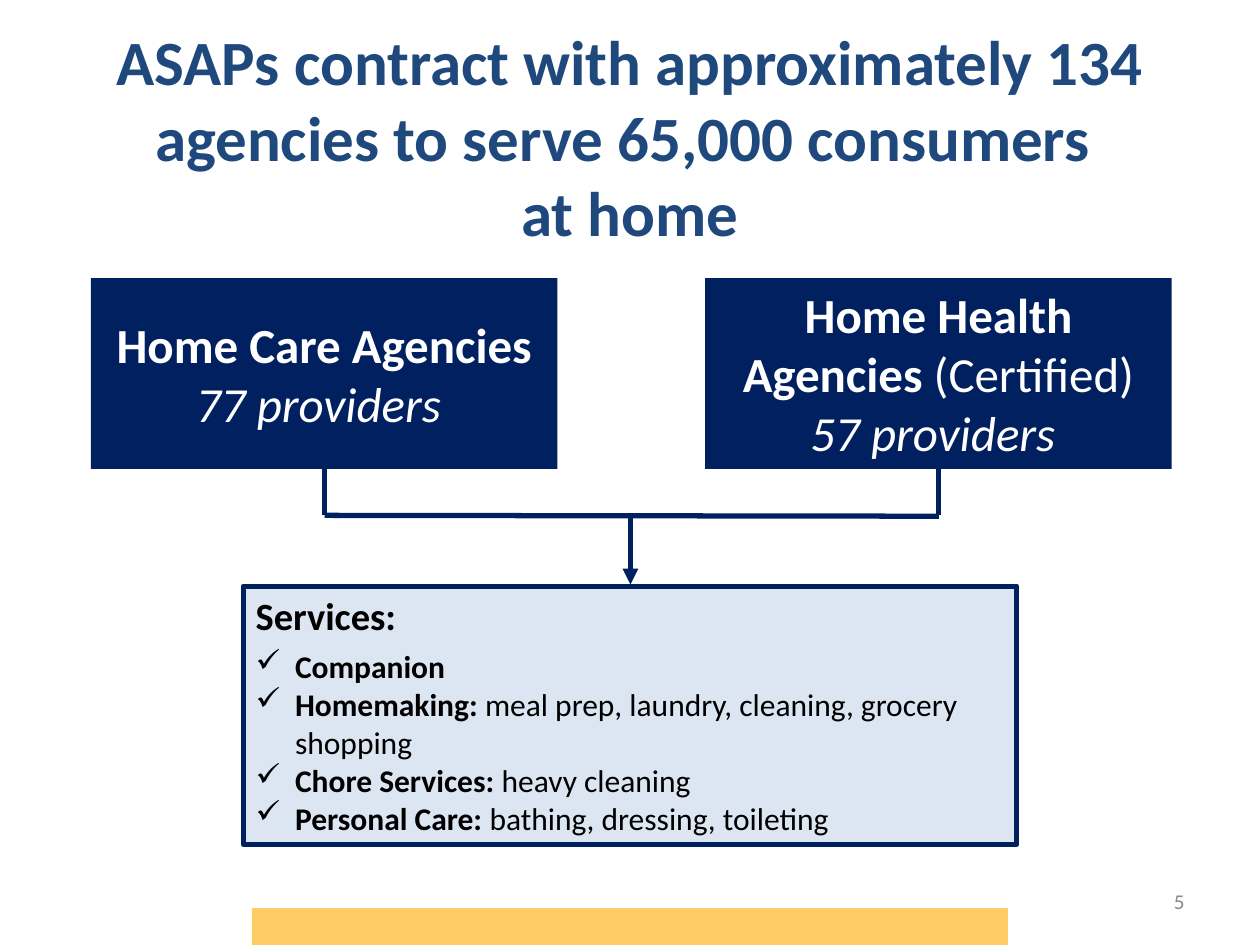
from pptx import Presentation
from pptx.dml.color import RGBColor
from pptx.enum.shapes import MSO_CONNECTOR, MSO_SHAPE
from pptx.enum.text import MSO_ANCHOR, PP_ALIGN
from pptx.oxml.ns import qn
from pptx.util import Pt
from lxml.etree import SubElement

NAVY = RGBColor(0x00, 0x20, 0x60)
TITLE_BLUE = RGBColor(0x1F, 0x49, 0x7D)
PALE_BLUE = RGBColor(0xDC, 0xE6, 0xF2)
GOLD = RGBColor(0xFF, 0xCC, 0x66)
GREY = RGBColor(0x88, 0x88, 0x88)
BLACK = RGBColor(0, 0, 0)
WHITE = RGBColor(0xFF, 0xFF, 0xFF)

SERVICES = [
    ("Companion", ""),
    ("Homemaking: ", "meal prep, laundry, cleaning, grocery shopping"),
    ("Chore Services: ", "heavy cleaning"),
    ("Personal Care: ", "bathing, dressing, toileting"),
]


def add_span(para, text, size, color, bold=False, italic=False):
    span = para.add_run()
    span.text = text
    span.font.name = "Calibri"
    span.font.size = Pt(size)
    span.font.color.rgb = color
    span.font.bold = bold
    span.font.italic = italic


def add_text_box(page, box, anchor):
    frame = page.shapes.add_textbox(*map(Pt, box)).text_frame
    frame.word_wrap = True
    frame.vertical_anchor = anchor
    return frame


def add_rectangle(page, box, fill, line=None):
    shape = page.shapes.add_shape(MSO_SHAPE.RECTANGLE, *map(Pt, box))
    shape.shadow.inherit = False
    shape.fill.solid()
    shape.fill.fore_color.rgb = fill
    if line is None:
        shape.line.fill.background()
    else:
        shape.line.color.rgb = line
        shape.line.width = Pt(3)
    return shape


def add_line(page, start, end, arrow=False):
    line = page.shapes.add_connector(MSO_CONNECTOR.STRAIGHT, *map(Pt, start + end))
    line.line.color.rgb = NAVY
    line.line.width = Pt(3)
    properties = line._element.spPr
    if arrow:
        SubElement(properties.find(qn("a:ln")), qn("a:tailEnd"), type="triangle")
    SubElement(properties, qn("a:effectLst"))


def add_title(page, box):
    para = add_text_box(page, box, MSO_ANCHOR.TOP).paragraphs[0]
    para.alignment = PP_ALIGN.CENTER
    add_span(para, "ASAPs contract with approximately 134 agencies to serve 65,000 consumers ",
             36, TITLE_BLUE, bold=True)
    para.add_line_break()
    add_span(para, "at home", 36, TITLE_BLUE, bold=True)


def add_agency(page, box, name, note, providers, anchor):
    frame = add_rectangle(page, box, NAVY).text_frame
    frame.word_wrap = True
    frame.vertical_anchor = anchor
    heading = frame.paragraphs[0]
    add_span(heading, name, 28, WHITE, bold=True)
    if note:
        add_span(heading, note, 28, WHITE)
    count = frame.add_paragraph()
    add_span(count, providers, 28, WHITE, italic=True)
    for para in frame.paragraphs:
        para.alignment = PP_ALIGN.CENTER


def add_check_bullet(para):
    properties = para._p.get_or_add_pPr()
    properties.set("marL", str(Pt(22.5)))
    properties.set("indent", str(Pt(-22.5)))
    color = SubElement(properties, qn("a:buClr"))
    SubElement(color, qn("a:srgbClr"), val=str(BLACK))
    SubElement(properties, qn("a:buChar"), char="✓")


def add_services(page, box):
    frame = add_rectangle(page, box, PALE_BLUE, NAVY).text_frame
    frame.word_wrap = True
    frame.vertical_anchor = MSO_ANCHOR.TOP
    heading = frame.paragraphs[0]
    heading.alignment = PP_ALIGN.LEFT
    heading.space_after = Pt(5)
    add_span(heading, "Services:", 22, BLACK, bold=True)
    for name, detail in SERVICES:
        para = frame.add_paragraph()
        para.alignment = PP_ALIGN.LEFT
        add_check_bullet(para)
        add_span(para, name, 18, BLACK, bold=True)
        if detail:
            add_span(para, detail, 18, BLACK)


def add_joining_lines(page, box):
    left, top, width, height = box
    right, middle = left + width, left + width / 2 - 0.75
    joint = top + 26.5
    add_line(page, (left, joint), (right, joint + 0.5))
    add_line(page, (middle, joint), (middle, top + height), arrow=True)
    for side in (left, right):
        add_line(page, (side, joint), (side, top))


def add_page_number(page, box):
    para = add_text_box(page, box, MSO_ANCHOR.MIDDLE).paragraphs[0]
    para.alignment = PP_ALIGN.RIGHT
    add_span(para, "5", 12, GREY)


def main():
    deck = Presentation()
    deck.slide_width, deck.slide_height = Pt(720), Pt(540)
    page = deck.slides.add_slide(deck.slide_layouts[6])
    add_page_number(page, (516, 500.5, 168, 28.75))
    add_title(page, (0, 9.5, 720, 138))
    add_services(page, (139, 335, 442, 147.5))
    add_joining_lines(page, (185.5, 268, 351, 66))
    add_agency(page, (52, 159, 266.5, 109), "Home Care Agencies", "",
               "77 providers ", MSO_ANCHOR.MIDDLE)
    add_agency(page, (403, 159, 266.5, 109), "Home Health Agencies ", "(Certified)",
               "57 providers ", MSO_ANCHOR.TOP)
    add_rectangle(page, (144, 519, 432, 21), GOLD)
    deck.save("out.pptx")


if __name__ == "__main__":
    main()
